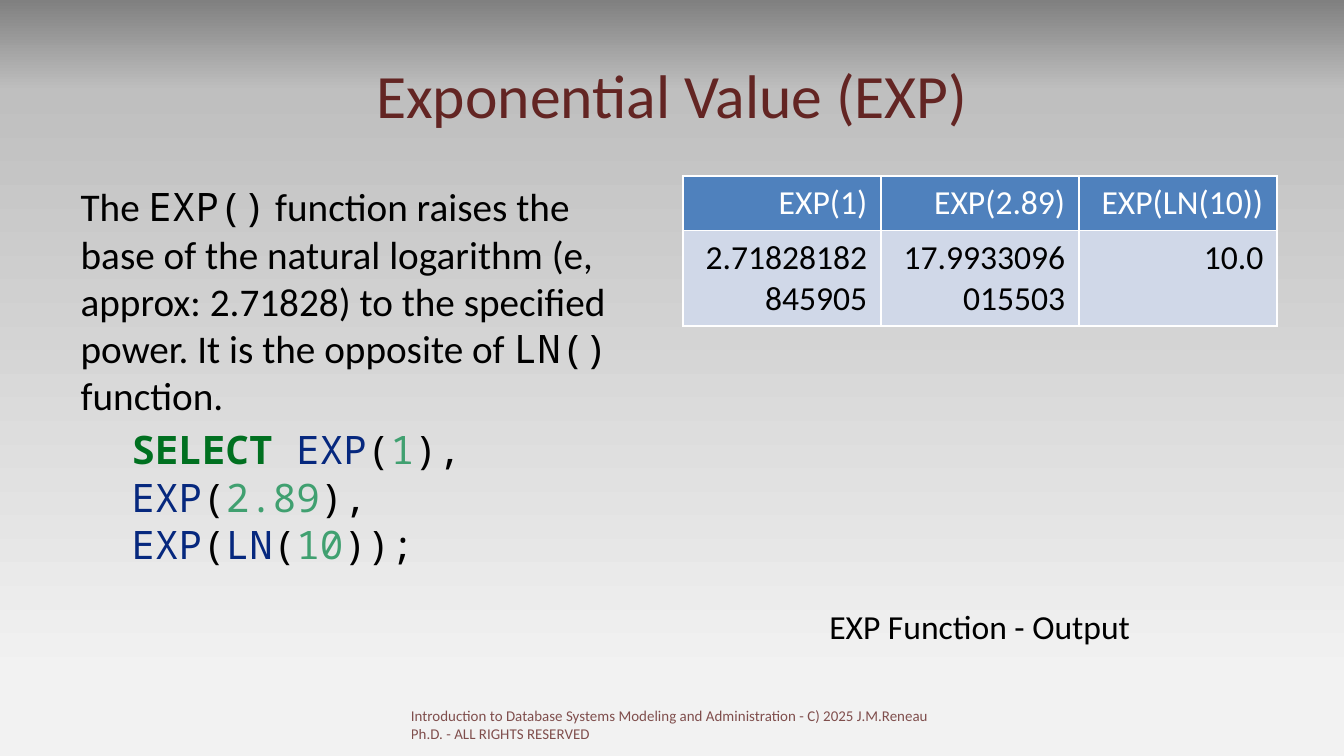
from copy import deepcopy

from lxml import etree
from pptx import Presentation
from pptx.dml.color import RGBColor
from pptx.enum import text
from pptx.oxml import ns
from pptx.util import Inches, Pt

COLORS = {
    "maroon": "632523", "black": "000000", "white": "FFFFFF",
    "keyword": "007020", "function": "06287E", "number": "40A070",
    "header": "4F81BD", "row": "D0D8E8",
    "bg_top": "808080", "bg_middle": "BFBFBF", "bg_bottom": "F2F2F2",
}
SANS, MONO = "Calibri", "Noto Sans Mono"


def add_text(paragraph, words, size=18, font=SANS, color="black", bold=False, align=None):
    run = paragraph.add_run()
    run.text = words
    run.font.size = Pt(size)
    run.font.name = font
    run.font.bold = bold
    run.font.color.rgb = RGBColor.from_string(COLORS[color])
    if align is not None:
        paragraph.alignment = align
    return run


def place(shape, left, top, width, height):
    """Move and size a shape in inches, and let its text wrap at a fixed size."""
    shape.left, shape.top = Inches(left), Inches(top)
    shape.width, shape.height = Inches(width), Inches(height)
    shape.text_frame.word_wrap = True
    shape.text_frame.auto_size = text.MSO_AUTO_SIZE.NONE


prs = Presentation()
prs.slide_width, prs.slide_height = Inches(10), Inches(10 * 9 / 16)
slide = prs.slides.add_slide(prs.slide_layouts[1])

# Background: three grey stops from top to bottom
background = slide.background.fill
background.gradient()
background.gradient_angle = 270
stop_list = next(slide.element.iter(ns.qn("a:gsLst")))
stop_list.insert(1, deepcopy(stop_list[0]))
grey_stops = [(0, "bg_top"), (0.12, "bg_middle"), (0.9, "bg_bottom")]
for stop, (position, color) in zip(background.gradient_stops, grey_stops):
    stop.position = position
    stop.color.rgb = RGBColor.from_string(COLORS[color])

# Title
title = slide.shapes.title
place(title, 0.5, 0.23, 9, 0.94)
title.text_frame.vertical_anchor = text.MSO_ANCHOR.MIDDLE
add_text(title.text_frame.paragraphs[0], "Exponential Value (EXP)", size=33,
         color="maroon", align=text.PP_ALIGN.CENTER)

# Explanation and query
body = slide.placeholders[1]
place(body, 0.5, 1.31, 4.42, 3.71)
explanation = body.text_frame.paragraphs[0]
query = body.text_frame.add_paragraph()
for paragraph, indent in ((explanation, 0), (query, 0.38)):
    properties = paragraph._p.get_or_add_pPr()
    properties.set("marL", str(Inches(indent)))
    properties.set("indent", "0")
    etree.SubElement(properties, ns.qn("a:buNone"))

for words, font in [
    ("The ", SANS), ("EXP()", MONO),
    (" function raises the base of the natural logarithm (e, approx: 2.71828) "
     "to the specified power. It is the opposite of ", SANS),
    ("LN()", MONO), (" function.", SANS),
]:
    add_text(explanation, words, size=21, font=font)

for words, color in [
    ("SELECT ", "keyword"),
    ("EXP", "function"), ("(", "black"), ("1", "number"), ("), ", "black"),
    ("EXP", "function"), ("(", "black"), ("2.89", "number"), ("), ", "black"),
    ("EXP", "function"), ("(", "black"), ("LN", "function"), ("(", "black"),
    ("10", "number"), ("));", "black"),
]:
    add_text(query, words, size=21, font=MONO, color=color, bold=color == "keyword")

# Query output
results = [
    ("EXP(1)", "EXP(2.89)", "EXP(LN(10))"),
    ("2.71828182845905", "17.9933096015503", "10.0"),
]
row_styles = [("header", "white"), ("row", "black")]
row_heights = [0.4, 0.71]
output = slide.shapes.add_table(2, 3, Inches(5.08), Inches(1.31),
                                Inches(4.42), Inches(sum(row_heights))).table
for row, values, height, (fill, color) in zip(output.rows, results, row_heights, row_styles):
    row.height = Inches(height)
    for cell, value in zip(row.cells, values):
        cell.fill.solid()
        cell.fill.fore_color.rgb = RGBColor.from_string(COLORS[fill])
        add_text(cell.text_frame.paragraphs[0], value, color=color,
                 align=text.PP_ALIGN.RIGHT)

# Caption below the output
caption = slide.shapes.add_textbox(0, 0, 0, 0)
place(caption, 5.08, 4.46, 4.42, 0.56)
add_text(caption.text_frame.paragraphs[0], "EXP Function - Output",
         align=text.PP_ALIGN.CENTER)

# Footer, slightly transparent
footer = slide.shapes.add_textbox(0, 0, 0, 0)
place(footer, 2.96, 5.21, 4.06, 0.3)
notice = add_text(
    footer.text_frame.paragraphs[0],
    "Introduction to Database Systems Modeling and Administration - "
    "C) 2025 J.M.Reneau Ph.D. - ALL RIGHTS RESERVED",
    size=8, color="maroon")
notice_color = next(notice._r.iter(ns.qn("a:srgbClr")))
etree.SubElement(notice_color, ns.qn("a:alpha"), val="80000")

prs.save("out.pptx")
